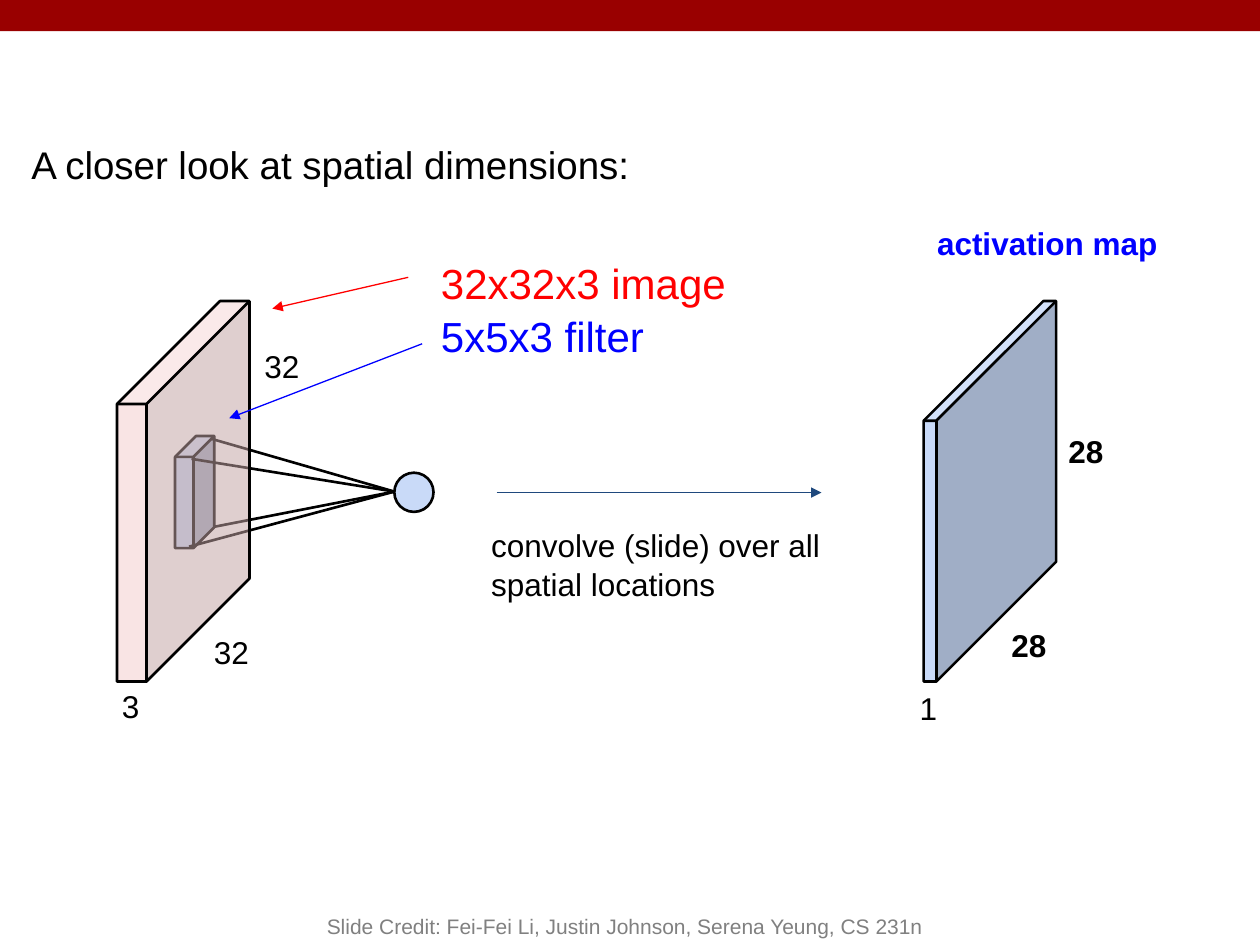
from dataclasses import dataclass

from lxml.etree import SubElement
from pptx import Presentation
from pptx.dml.color import RGBColor
from pptx.enum.shapes import MSO_CONNECTOR, MSO_SHAPE
from pptx.enum.text import MSO_ANCHOR, PP_ALIGN
from pptx.oxml.ns import qn
from pptx.util import Cm, Pt

COLORS = {
    "banner": "990000",
    "black": "000000",
    "red": "FF0000",
    "blue": "0000FF",
    "navy": "1F497D",
    "gray": "808080",
    "pale_blue": "C9DAF8",
    "pale_red": "F4CCCC",
}
FONT = "Arial"


@dataclass
class Block:
    """A preset shape; lengths in centimetres."""
    kind: MSO_SHAPE
    left: float
    top: float
    width: float
    height: float
    fill: str
    line: str | None = "black"
    depth: float | None = None
    opacity: int = 100


@dataclass
class Segment:
    """A straight line, with an optional arrowhead at its end."""
    start: tuple[float, float]
    end: tuple[float, float]
    color: str = "black"
    width: float = 1.5
    arrow: bool = False


@dataclass
class Label:
    """A text box with one (text, colour) pair per paragraph."""
    left: float
    top: float
    width: float
    height: float
    lines: list[tuple[str, str]]
    size: int = 18
    bold: bool = False
    align: PP_ALIGN = PP_ALIGN.LEFT
    anchor: MSO_ANCHOR = MSO_ANCHOR.TOP
    inset: float = 0.25
    spacing: float = 1.05


def rgb(name: str) -> RGBColor:
    return RGBColor.from_string(COLORS[name])


def draw_block(slide, block: Block) -> None:
    shape = slide.shapes.add_shape(
        block.kind, Cm(block.left), Cm(block.top), Cm(block.width), Cm(block.height))
    shape.shadow.inherit = False
    shape.fill.solid()
    shape.fill.fore_color.rgb = rgb(block.fill)
    if block.depth is not None:
        shape.adjustments[0] = block.depth
    if block.opacity < 100:
        color = shape._element.spPr.find(qn("a:solidFill"))[0]
        SubElement(color, qn("a:alpha"), val=str(block.opacity * 1000))
    if block.line:
        shape.line.color.rgb = rgb(block.line)
        shape.line.width = Pt(1.5)
    else:
        shape.line.fill.background()


def draw_segment(slide, segment: Segment) -> None:
    points = [Cm(value) for value in (*segment.start, *segment.end)]
    connector = slide.shapes.add_connector(MSO_CONNECTOR.STRAIGHT, *points)
    connector.line.color.rgb = rgb(segment.color)
    connector.line.width = Pt(segment.width)
    properties = connector._element.spPr
    if segment.arrow:
        SubElement(properties.find(qn("a:ln")), qn("a:tailEnd"), type="triangle")
    SubElement(properties, qn("a:effectLst"))


def write_label(shape, label: Label) -> None:
    shape.left, shape.top = Cm(label.left), Cm(label.top)
    shape.width, shape.height = Cm(label.width), Cm(label.height)
    frame = shape.text_frame
    frame.word_wrap = True
    frame.vertical_anchor = label.anchor
    frame.margin_left = frame.margin_right = Cm(0.25)
    frame.margin_top = frame.margin_bottom = Cm(label.inset)
    for index, (text, color) in enumerate(label.lines):
        paragraph = frame.add_paragraph() if index else frame.paragraphs[0]
        paragraph.alignment = label.align
        paragraph.line_spacing = label.spacing
        paragraph.space_before = Pt(0)
        run = paragraph.add_run()
        run.text = text
        run.font.name = FONT
        run.font.size = Pt(label.size)
        run.font.bold = label.bold
        run.font.color.rgb = rgb(color)


def draw_label(slide, label: Label) -> None:
    box = slide.shapes.add_textbox(
        Cm(label.left), Cm(label.top), Cm(label.width), Cm(label.height))
    write_label(box, label)


BANNER = Block(MSO_SHAPE.RECTANGLE, 0, 0, 25.4, 0.63, "banner", line=None)
TITLE = Label(0.38, 2.54, 23.27, 1.68,
              [("A closer look at spatial dimensions:", "black")], size=22)

# The image volume covers the filter and its connections, so it is drawn after them
FILTER = Block(MSO_SHAPE.CUBE, 3.53, 8.79, 0.79, 2.26, "pale_blue", depth=0.534)
NEURON = Block(MSO_SHAPE.OVAL, 7.95, 9.53, 0.79, 0.79, "pale_blue")
IMAGE = Block(MSO_SHAPE.CUBE, 2.36, 6.07, 2.67, 7.67, "pale_red", depth=0.777, opacity=52)
ACTIVATION_MAP = Block(MSO_SHAPE.CUBE, 18.62, 6.07, 2.67, 7.67, "pale_blue", depth=0.904)

NEURON_INPUT = (7.95, 9.91)
FILTER_CORNERS = [(3.81, 11.02), (3.86, 9.25), (4.24, 8.84), (4.32, 10.62)]

ARROWS = [
    Segment((8.23, 5.59), (5.49, 6.22), "red", 0.75, arrow=True),
    Segment((8.51, 6.93), (4.62, 8.43), "blue", 0.75, arrow=True),
    Segment((10.01, 9.93), (16.56, 9.93), "navy", 0.75, arrow=True),
]

LABELS = [
    # Image dimensions
    Label(4.06, 12.47, 1.37, 0.86, [("32", "black")]),
    Label(5.08, 6.71, 1.37, 0.79, [("32", "black")]),
    Label(2.21, 13.56, 1.37, 0.51, [("3", "black")]),
    # Explanations
    Label(8.64, 4.9, 10.11, 1.52,
          [("32x32x3 image", "red"), ("5x5x3 filter", "blue")], size=24),
    Label(9.65, 10.31, 9.09, 2.26,
          [("convolve (slide) over all spatial locations", "black")]),
    # Activation map and its dimensions
    Label(18.64, 4.22, 5, 1.5, [("activation map", "blue")], bold=True),
    Label(18.29, 13.61, 0.91, 0.86, [("1", "black")]),
    Label(20.14, 12.34, 1.37, 0.86, [("28", "black")], bold=True),
    Label(21.29, 8.43, 1.37, 0.86, [("28", "black")], bold=True),
    # Credit
    Label(5.08, 17.78, 15.04, 1.27,
          [("Slide Credit: Fei-Fei Li, Justin Johnson, Serena Yeung, CS 231n", "gray")],
          size=12, align=PP_ALIGN.CENTER, anchor=MSO_ANCHOR.BOTTOM, inset=0.13, spacing=1.0),
]


def main() -> None:
    presentation = Presentation()
    presentation.slide_width, presentation.slide_height = Cm(25.4), Cm(19.05)
    slide = presentation.slides.add_slide(presentation.slide_layouts[5])

    # Banner and title
    draw_block(slide, BANNER)
    write_label(slide.shapes.title, TITLE)

    # Filter connected to one neuron, seen through the image volume
    draw_block(slide, FILTER)
    draw_block(slide, NEURON)
    for corner in FILTER_CORNERS:
        draw_segment(slide, Segment(corner, NEURON_INPUT))
    draw_block(slide, IMAGE)

    # Resulting map, arrows and texts
    draw_block(slide, ACTIVATION_MAP)
    for arrow in ARROWS:
        draw_segment(slide, arrow)
    for label in LABELS:
        draw_label(slide, label)

    presentation.save("out.pptx")


if __name__ == "__main__":
    main()
